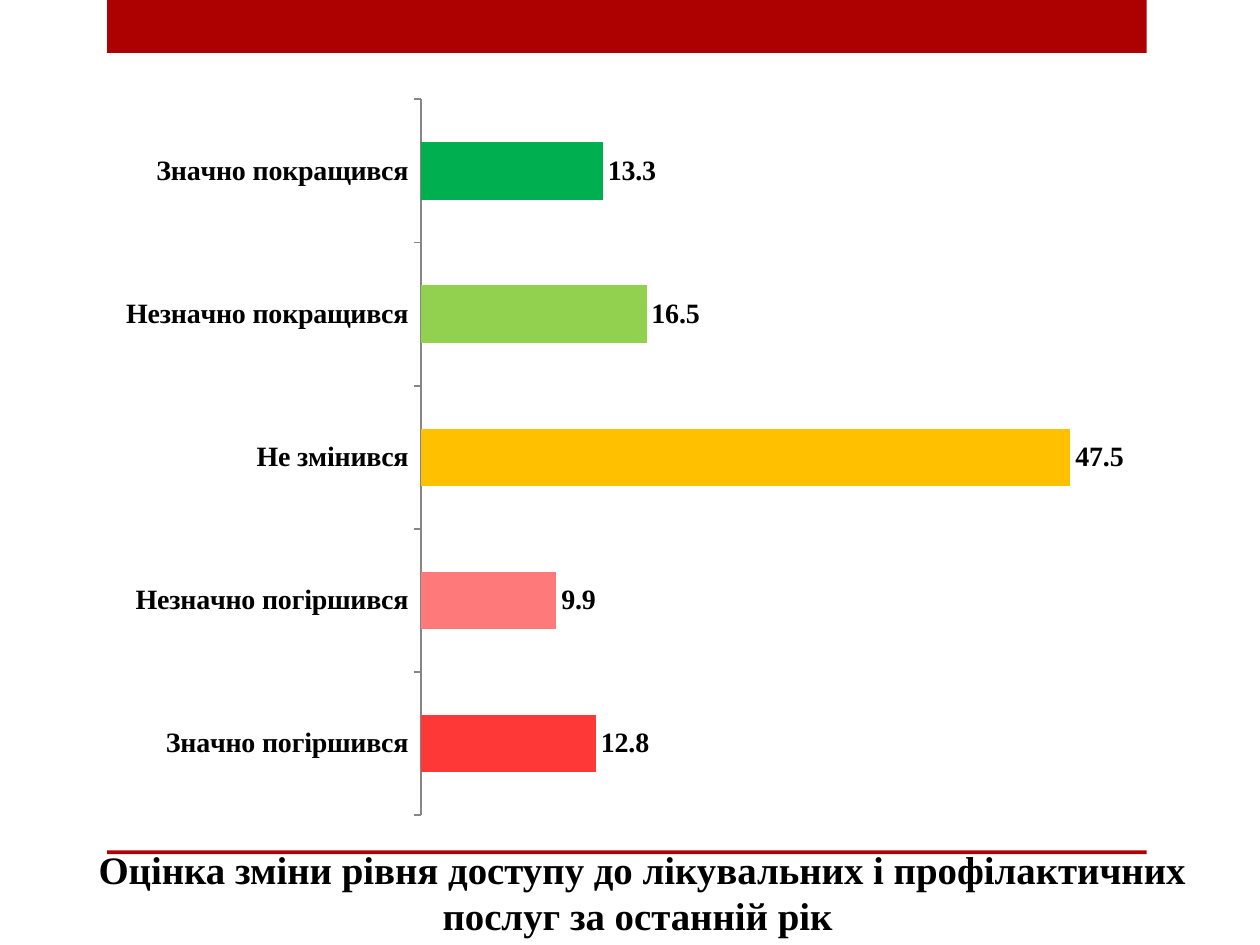
from dataclasses import dataclass

from lxml import etree
from pptx import Presentation
from pptx.chart.data import CategoryChartData
from pptx.dml.color import RGBColor
from pptx.enum.chart import XL_CHART_TYPE, XL_LABEL_POSITION, XL_TICK_LABEL_POSITION, XL_TICK_MARK
from pptx.enum.shapes import MSO_SHAPE
from pptx.enum.text import MSO_ANCHOR, PP_ALIGN
from pptx.oxml.ns import qn
from pptx.slide import Slide
from pptx.util import Inches, Pt

COLORS = {
    "band": "AD0101",
    "text": "000000",
    "axis": "868686",
    "much_better": "00B050",
    "better": "92D050",
    "same": "FFC000",
    "worse": "FE7979",
    "much_worse": "FE3737",
}
FONT_NAME = "Times New Roman"
NUMBER_FORMAT = "###0.0"
TITLE = "Оцінка зміни рівня доступу до лікувальних і профілактичних послуг за останній рік "


@dataclass
class Band:
    top: float
    height: float


@dataclass
class Answer:
    label: str
    percent: float
    color: str


BANDS = [Band(0, 0.42), Band(6.75, 0.03)]
ANSWERS = [
    Answer("Значно покращився", 13.3, "much_better"),
    Answer("Незначно покращився", 16.5, "better"),
    Answer("Не змінився", 47.5, "same"),
    Answer("Незначно погіршився", 9.9, "worse"),
    Answer("Значно погіршився", 12.8, "much_worse"),
]
# Inner plot area as fractions of the chart
PLOT_LAYOUT = {"x": 0.31, "y": 0.02, "w": 0.67, "h": 0.96}


def color(name: str) -> RGBColor:
    return RGBColor.from_string(COLORS[name])


def style_font(font, size: float) -> None:
    font.name = FONT_NAME
    font.size = Pt(size)
    font.bold = True
    font.color.rgb = color("text")


def add_band(slide: Slide, band: Band) -> None:
    shape = slide.shapes.add_shape(
        MSO_SHAPE.RECTANGLE, Inches(0.85), Inches(band.top), Inches(8.25), Inches(band.height)
    )
    shape.shadow.inherit = False
    shape.fill.solid()
    shape.fill.fore_color.rgb = color("band")
    shape.line.fill.background()


def add_title(slide: Slide, text: str) -> None:
    box = slide.shapes.add_textbox(Inches(0.24), Inches(6.8), Inches(9.72), Inches(0.7))
    text_frame = box.text_frame
    text_frame.word_wrap = True
    text_frame.vertical_anchor = MSO_ANCHOR.BOTTOM
    text_frame.text = text
    paragraph = text_frame.paragraphs[0]
    paragraph.alignment = PP_ALIGN.CENTER
    style_font(paragraph.runs[0].font, 22.2)


def set_plot_layout(chart) -> None:
    plot_area = chart.plots[0]._element.getparent()
    for old_layout in plot_area.findall(qn("c:layout")):
        plot_area.remove(old_layout)
    layout = etree.Element(qn("c:layout"))
    manual = etree.SubElement(layout, qn("c:manualLayout"))
    settings = {"layoutTarget": "inner", "xMode": "edge", "yMode": "edge", **PLOT_LAYOUT}
    for tag, value in settings.items():
        etree.SubElement(manual, qn(f"c:{tag}")).set("val", str(value))
    plot_area.insert(0, layout)


def add_answer_chart(slide: Slide, answers: list[Answer]) -> None:
    data = CategoryChartData(number_format=NUMBER_FORMAT)
    data.categories = [answer.label for answer in answers]
    data.add_series("Series 1", [answer.percent for answer in answers])
    chart = slide.shapes.add_chart(
        XL_CHART_TYPE.BAR_CLUSTERED, Inches(0.83), Inches(0.67), Inches(8.1), Inches(5.92), data
    ).chart
    chart.has_legend = False
    chart.has_title = False
    style_font(chart.font, 16)
    set_plot_layout(chart)

    # Axes: first answer on top, values hidden
    category_axis = chart.category_axis
    category_axis.reverse_order = True
    category_axis.major_tick_mark = XL_TICK_MARK.OUTSIDE
    category_axis.tick_label_position = XL_TICK_LABEL_POSITION.NEXT_TO_AXIS
    category_axis.format.line.color.rgb = color("axis")
    category_axis.format.line.width = Pt(1)
    value_axis = chart.value_axis
    value_axis.minimum_scale = 0
    value_axis.maximum_scale = 50
    value_axis.has_major_gridlines = False
    value_axis.visible = False

    # Bars and their labels
    plot = chart.plots[0]
    plot.gap_width = 150
    plot.vary_by_categories = False
    series = plot.series[0]
    series.format.fill.solid()
    series.format.fill.fore_color.rgb = color("band")
    for index, answer in enumerate(answers):
        fill = series.points[index].format.fill
        fill.solid()
        fill.fore_color.rgb = color(answer.color)
    labels = series.data_labels
    labels.show_value = True
    labels.number_format = NUMBER_FORMAT
    labels.number_format_is_linked = False
    labels.position = XL_LABEL_POSITION.OUTSIDE_END
    style_font(labels.font, 16)


def main() -> None:
    presentation = Presentation()
    presentation.slide_width = Inches(10)
    presentation.slide_height = Inches(7.5)
    slide = presentation.slides.add_slide(presentation.slide_layouts[6])
    for band in BANDS:
        add_band(slide, band)
    add_title(slide, TITLE)
    add_answer_chart(slide, ANSWERS)
    presentation.save("out.pptx")


if __name__ == "__main__":
    main()
